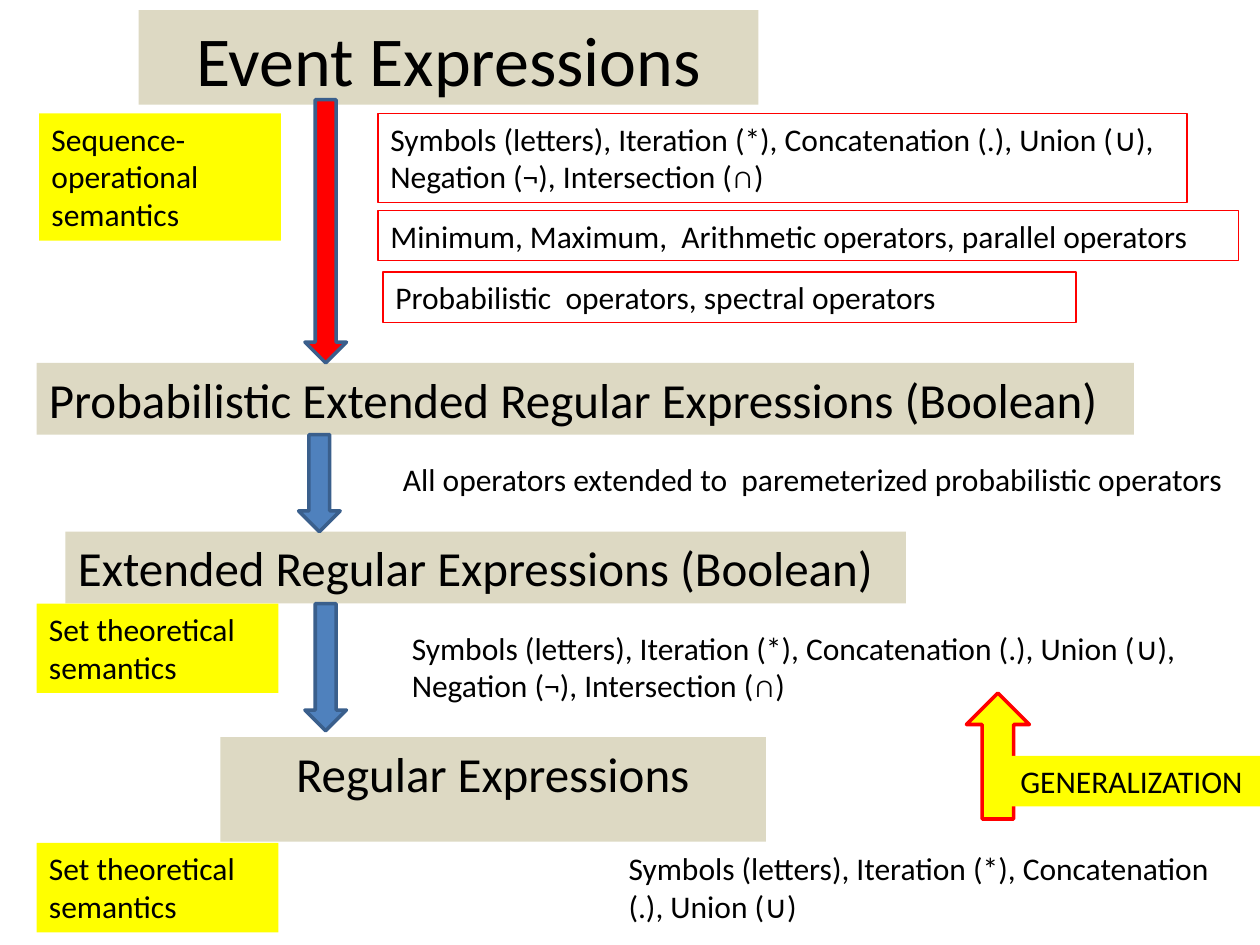
from pptx import Presentation
from pptx import util as u
from pptx.dml.color import RGBColor
from pptx.enum import shapes, text

TAN = RGBColor(0xDD, 0xD9, 0xC3)
YELLOW = RGBColor(0xFF, 0xFF, 0x00)
RED = RGBColor(0xFF, 0x00, 0x00)
BLUE = RGBColor(0x4F, 0x81, 0xBD)
DARK_BLUE = RGBColor(0x3A, 0x5F, 0x8C)
BLACK = RGBColor(0x00, 0x00, 0x00)

BASIC = "Symbols (letters), Iteration (*), Concatenation (.), Union (∪)"
BOOLEAN = BASIC + ", Negation (¬), Intersection (∩)"

presentation = Presentation()
presentation.slide_width = u.Inches(10)
presentation.slide_height = u.Inches(7.5)
slide = presentation.slides.add_slide(presentation.slide_layouts[6])


def add_box(place, lines, size, fill=None, line=None):
    box = slide.shapes.add_textbox(*map(u.Inches, place))
    if fill is not None:
        box.fill.solid()
        box.fill.fore_color.rgb = fill
    if line is not None:
        box.line.color.rgb = line
        box.line.width = u.Pt(0.75)
    frame = box.text_frame
    frame.word_wrap = True
    frame.text = lines
    for paragraph in frame.paragraphs:
        font = paragraph.runs[0].font
        for name, value in {"name": "Calibri", "size": u.Pt(size)}.items():
            setattr(font, name, value)
        font.color.rgb = BLACK
    return box


def add_arrow(place, fill, line, rotation=0):
    arrow = slide.shapes.add_shape(shapes.MSO_SHAPE.DOWN_ARROW, *map(u.Inches, place))
    arrow.shadow.inherit = False
    arrow.rotation = rotation
    arrow.fill.solid()
    arrow.fill.fore_color.rgb = fill
    arrow.line.color.rgb = line
    arrow.line.width = u.Pt(2)


# Levels of expressions, from the most general down
title = add_box((1.1, 0.08, 4.92, 0.75), "Event Expressions", 40, TAN)
title.text_frame.paragraphs[0].alignment = text.PP_ALIGN.CENTER
add_box((0.29, 2.88, 8.71, 0.57),
        "Probabilistic Extended Regular Expressions (Boolean)", 28, TAN)
add_box((0.52, 4.22, 6.67, 0.57), "Extended Regular Expressions (Boolean)", 28, TAN)
regular = add_box((1.75, 5.85, 4.33, 0.83), "Regular Expressions", 28, TAN)
regular.text_frame.margin_left = u.Inches(0.6)

# Arrows between the levels, and the one pointing back up
for left, top, height, fill in [
    (2.42, 0.79, 2.09, RED),
    (2.37, 3.45, 0.77, BLUE),
    (2.42, 4.79, 1.01, BLUE),
]:
    add_arrow((left, top, 0.33, height), fill, DARK_BLUE)
add_arrow((7.67, 5.5, 0.5, 1), YELLOW, RED, rotation=180)

# Yellow labels
for place, label in [
    ((0.31, 0.9, 1.92, 1.01), "Sequence-operational\nsemantics"),
    ((0.29, 4.79, 1.92, 0.71), "Set theoretical semantics"),
    ((0.29, 6.69, 1.92, 0.71), "Set theoretical semantics"),
    ((8, 6, 2, 0.4), "GENERALIZATION"),
]:
    add_box(place, label, 18, YELLOW)

# Operators of each level, framed for the event expressions
for place, operators, line in [
    ((3, 0.9, 6.42, 0.71), BOOLEAN, RED),
    ((3, 1.67, 6.83, 0.4),
     "Minimum, Maximum,  Arithmetic operators, parallel operators", RED),
    ((3.04, 2.16, 5.5, 0.4), "Probabilistic  operators, spectral operators", RED),
    ((3.1, 3.6, 6.9, 0.4),
     "All operators extended to  paremeterized probabilistic operators", None),
    ((3.17, 4.94, 6.63, 0.71), BOOLEAN, None),
    ((4.89, 6.69, 4.94, 0.71), BASIC, None),
]:
    add_box(place, operators, 18, line=line)

presentation.save("out.pptx")
